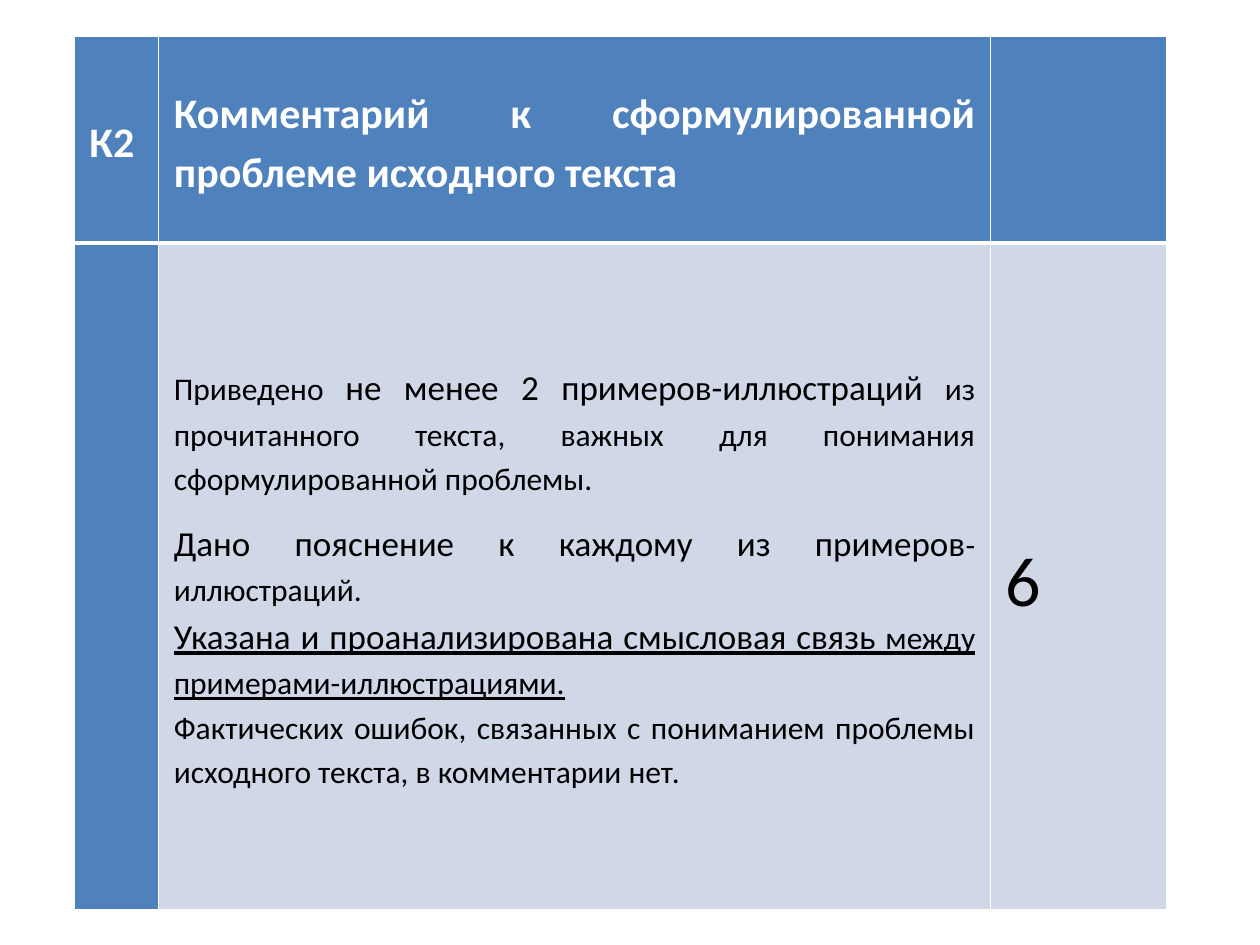
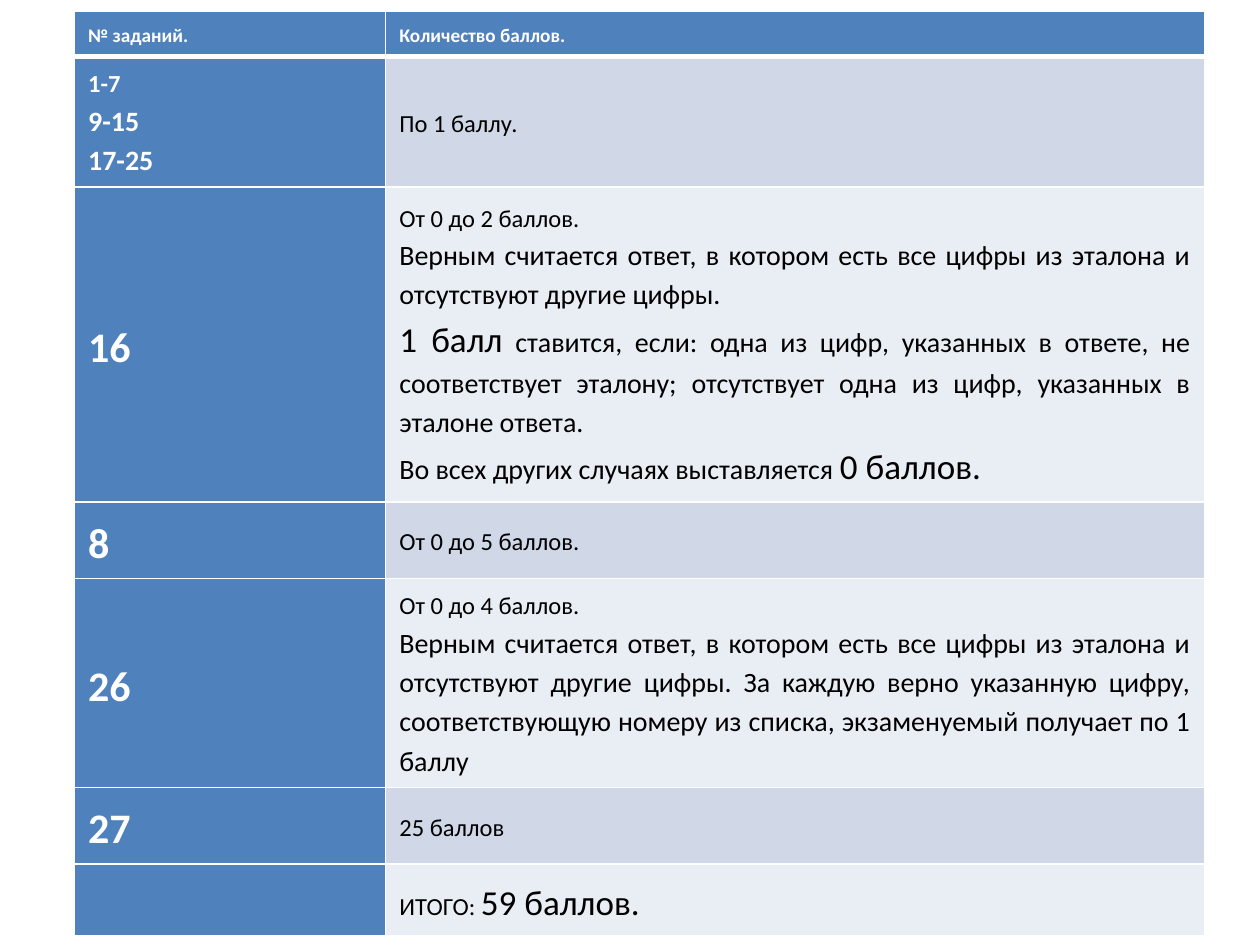
from dataclasses import dataclass
from typing import NamedTuple

from lxml.etree import SubElement
from pptx import Presentation
from pptx.dml.color import RGBColor
from pptx.enum.text import MSO_ANCHOR as Anchor, PP_ALIGN as Align
from pptx.oxml.ns import qn
from pptx.util import Inches, Pt

FONT = "Calibri"
WHITE = RGBColor(0xFF, 0xFF, 0xFF)
BLACK = RGBColor(0x00, 0x00, 0x00)
BLUE = RGBColor(0x4F, 0x81, 0xBD)
PALE = RGBColor(0xE9, 0xED, 0xF4)
MIST = RGBColor(0xD0, 0xD8, 0xE8)
BANDS = (PALE, MIST)
THIN, THICK = Pt(1), Pt(3)


class Run(NamedTuple):
    text: str
    size: int
    under: bool = False


class Para(NamedTuple):
    runs: list[Run]
    after: int = 0


@dataclass
class Grid:
    left: float
    top: float
    cols: list[float]
    rows: list[float]
    pad: tuple[float, float]
    cells: list[list[list[Para]]]


def line(text: str, size: int, after: int = 0) -> Para:
    return Para([Run(text, size)], after)


def add_text(para, text: str, *, size: int, color: RGBColor,
             bold: bool = False, under: bool = False) -> None:
    run = para.add_run()
    run.text = text
    font = run.font
    font.name, font.size = FONT, Pt(size)
    font.bold, font.underline = bold, under
    font.color.rgb = color


def set_edges(cell, top: int, bottom: int) -> None:
    """Give the cell white borders; they must come before its fill."""
    props = cell._tc.get_or_add_tcPr()
    widths = {"a:lnL": THIN, "a:lnR": THIN, "a:lnT": top, "a:lnB": bottom}
    for place, (tag, width) in enumerate(widths.items()):
        edge = SubElement(props, qn(tag), w=str(width))
        fill = SubElement(edge, qn("a:solidFill"))
        SubElement(fill, qn("a:srgbClr"), val=str(WHITE))
        props.insert(place, edge)


def fill_cell(cell, paras: list[Para], pad: tuple[float, float],
              color: RGBColor, bold: bool) -> None:
    cell.vertical_anchor = Anchor.MIDDLE
    cell.margin_left = cell.margin_right = Inches(pad[0])
    cell.margin_top = cell.margin_bottom = Inches(pad[1])
    frame = cell.text_frame
    for num, item in enumerate(paras):
        para = frame.add_paragraph() if num else frame.paragraphs[0]
        para.alignment = Align.JUSTIFY
        para.line_spacing = 1.15
        para.space_after = Pt(item.after)
        for run in item.runs:
            add_text(para, run.text, size=run.size, color=color,
                     bold=bold, under=run.under)


def add_grid(slide, grid: Grid) -> None:
    """Draw a table with a blue header row and first column."""
    table = slide.shapes.add_table(
        len(grid.rows), len(grid.cols), Inches(grid.left), Inches(grid.top),
        Inches(sum(grid.cols)), Inches(sum(grid.rows))).table
    table.first_row = table.horz_banding = False
    for col, width in zip(table.columns, grid.cols):
        col.width = Inches(width)
    for row, height in zip(table.rows, grid.rows):
        row.height = Inches(height)
    for r, row in enumerate(grid.cells):
        for c, paras in enumerate(row):
            cell = table.cell(r, c)
            head = r == 0 or c == 0
            cell.fill.solid()
            cell.fill.fore_color.rgb = BLUE if head else BANDS[r % 2]
            set_edges(cell, THICK if r == 1 else THIN,
                      THICK if r == 0 else THIN)
            fill_cell(cell, paras, grid.pad, WHITE if head else BLACK, head)


COMMENT = Grid(
    left=0.59, top=0.29, cols=[0.67, 6.6, 1.4], rows=[1.64, 5.29],
    pad=(0.12, 0.08),
    cells=[
        [[line("К2", 24, 10)],
         [line("Комментарий к сформулированной проблеме исходного текста",
               24, 10)],
         []],
        [[],
         [Para([Run("Приведено ", 18),
                Run("не менее 2 примеров-иллюстраций", 20),
                Run(" из прочитанного текста, важных для понимания "
                    "сформулированной проблемы.", 18)], 10),
          Para([Run("Дано пояснение к каждому из примеров", 20),
                Run("-иллюстраций.", 18)]),
          Para([Run("Указана и проанализирована смысловая связь", 20, True),
                Run(" между примерами-иллюстрациями.", 18, True)]),
          line("Фактических ошибок, связанных с пониманием проблемы "
               "исходного текста, в комментарии нет.", 18)],
         [line("6", 40, 10)]],
    ])

RIGHT = ("Верным считается ответ, в котором есть все цифры из эталона "
         "и отсутствуют другие цифры.")

SCORES = Grid(
    left=0.59, top=0.09, cols=[2.47, 6.5],
    rows=[0.33, 0.97, 2.5, 0.57, 1.54, 0.57, 0.57], pad=(0.11, 0.07),
    cells=[
        [[line("№ заданий.", 11)], [line("Количество баллов.", 11)]],
        [[line("1-7", 14), line("9-15", 16), line("17-25", 16)],
         [line("По 1 баллу.", 14)]],
        [[line("16", 24)],
         [line("От 0 до 2 баллов.", 14),
          line(RIGHT, 16),
          Para([Run("1 балл", 20),
                Run(" ставится, если: одна из цифр, указанных в ответе, "
                    "не соответствует эталону; отсутствует одна из цифр, "
                    "указанных в эталоне ответа.", 16)]),
          Para([Run("Во всех других случаях выставляется ", 16),
                Run("0 баллов.", 20)])]],
        [[line("8", 24)], [line("От 0 до 5 баллов.", 14)]],
        [[line("26", 24)],
         [line("От 0 до 4 баллов.", 14),
          line(RIGHT + " За каждую верно указанную цифру, соответствующую "
               "номеру из списка, экзаменуемый получает по 1 баллу", 16)]],
        [[line("27", 24)], [line("25 баллов", 14)]],
        [[], [Para([Run("ИТОГО: ", 14), Run("59 баллов.", 20)])]],
    ])


def main() -> None:
    deck = Presentation()
    deck.slide_width, deck.slide_height = Inches(10), Inches(7.5)
    blank = deck.slide_layouts[6]
    for grid in (COMMENT, SCORES):
        add_grid(deck.slides.add_slide(blank), grid)
    deck.save("out.pptx")


if __name__ == "__main__":
    main()
